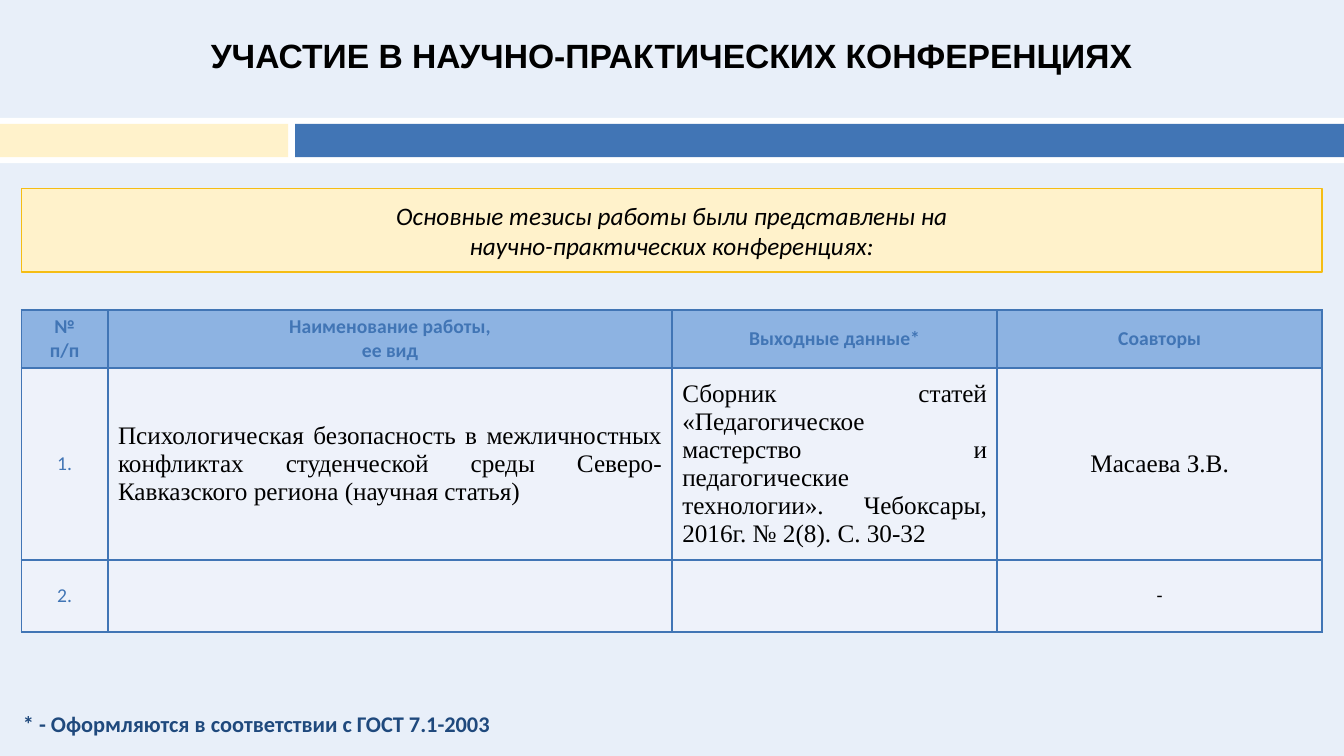
from dataclasses import dataclass

from lxml import etree
from pptx import Presentation
from pptx.dml.color import RGBColor
from pptx.enum.shapes import MSO_SHAPE
from pptx.enum.text import MSO_ANCHOR, MSO_AUTO_SIZE, PP_ALIGN
from pptx.oxml.ns import qn
from pptx.util import Cm, Pt

RECT = MSO_SHAPE.RECTANGLE
MIDDLE = MSO_ANCHOR.MIDDLE
NO_FIT = MSO_AUTO_SIZE.NONE
LEFT, CENTER, JUSTIFY = PP_ALIGN.LEFT, PP_ALIGN.CENTER, PP_ALIGN.JUSTIFY


@dataclass(frozen=True)
class Theme:
    background: str = "E8EFF9"
    white: str = "FFFFFF"
    black: str = "000000"
    blue: str = "4175B5"
    navy: str = "1F497D"
    cream: str = "FFF2CB"
    gold: str = "F5BD14"
    header: str = "8DB3E2"
    cell: str = "EEF2FA"
    title_size: int = 24
    text_size: int = 18
    note_size: int = 16
    label_size: int = 14
    title_font: str = "Arial"
    main_font: str = "Calibri"
    entry_font: str = "Times New Roman"


T = Theme()


def write(tf, text, font, size, color, align=CENTER, bold=False, italic=False):
    for i, line in enumerate(text.split("\n")):
        p = tf.paragraphs[0] if i == 0 else tf.add_paragraph()
        p.text = line
        p.alignment = align
        p.font.name = font
        p.font.size = Pt(size)
        p.font.bold = bold
        p.font.italic = italic
        p.font.color.rgb = RGBColor.from_string(color)


def add_rect(s, left, top, width, height, fill, line=None):
    sp = s.shapes.add_shape(RECT, Cm(left), Cm(top), Cm(width), Cm(height))
    sp.shadow.inherit = False
    sp.fill.solid()
    sp.fill.fore_color.rgb = RGBColor.from_string(fill)
    if line:
        sp.line.color.rgb = RGBColor.from_string(line)
        sp.line.width = Pt(1)
    else:
        sp.line.fill.background()
    return sp


prs = Presentation()
prs.slide_width, prs.slide_height = Cm(33.87), Cm(19.05)
s = prs.slides.add_slide(prs.slide_layouts[5])
s.background.fill.solid()
s.background.fill.fore_color.rgb = RGBColor.from_string(T.background)

title = s.shapes.title
title.left, title.top, title.width, title.height = Cm(4.95), Cm(0.76), Cm(23.95), Cm(1.27)
tf = title.text_frame
tf.auto_size = NO_FIT
tf.word_wrap = False
tf.vertical_anchor = MIDDLE
write(tf, "УЧАСТИЕ В НАУЧНО-ПРАКТИЧЕСКИХ КОНФЕРЕНЦИЯХ", T.title_font, T.title_size, T.black, bold=True)

add_rect(s, 0, 2.97, 33.87, 1.14, T.white)
add_rect(s, 7.44, 3.12, 26.43, 0.84, T.blue)
add_rect(s, 0, 3.12, 7.26, 0.84, T.cream)

banner = add_rect(s, 0.54, 4.75, 32.78, 2.11, T.cream, T.gold)
tf = banner.text_frame
tf.word_wrap = True
tf.vertical_anchor = MIDDLE
write(tf, "Основные тезисы работы были представлены на\nнаучно-практических конференциях:",
      T.main_font, T.text_size, T.black, italic=True)

header = ["№\nп/п", "Наименование работы,\nее вид", "Выходные данные*", "Соавторы"]
works = [
    ["1.",
     "Психологическая безопасность в межличностных конфликтах студенческой среды "
     "Северо-Кавказского региона (научная статья)",
     "Сборник статей «Педагогическое мастерство и педагогические технологии». "
     "Чебоксары, 2016г. № 2(8). С. 30-32",
     "Масаева З.В."],
    ["2.", "", "", "-"],
]
label = (T.main_font, T.label_size, T.blue, CENTER)
entry = (T.entry_font, T.text_size, T.black)
styles = [
    [(*label, True)] * 4,
    [label, (*entry, JUSTIFY), (*entry, JUSTIFY), (*entry, CENTER)],
    [label, label, label, (T.main_font, T.label_size, T.black, CENTER)],
]
col_widths = [2.18, 14.22, 8.19, 8.19]
row_heights = [1.44, 4.84, 1.82]
table = s.shapes.add_table(3, 4, Cm(0.54), Cm(7.81), Cm(sum(col_widths)), Cm(sum(row_heights))).table
table.first_row = False
table.horz_banding = False
for col, width in zip(table.columns, col_widths):
    col.width = Cm(width)
for row, height in zip(table.rows, row_heights):
    row.height = Cm(height)

for r, texts in enumerate([header, *works]):
    for c, text in enumerate(texts):
        cell = table.cell(r, c)
        cell.vertical_anchor = MIDDLE
        if text:
            write(cell.text_frame, text, *styles[r][c])
        tcPr = cell._tc.get_or_add_tcPr()
        for side in ("lnL", "lnR", "lnT", "lnB"):
            ln = etree.SubElement(tcPr, qn(f"a:{side}"), w=str(Pt(1.5)))
            fill = etree.SubElement(ln, qn("a:solidFill"))
            etree.SubElement(fill, qn("a:srgbClr"), val=T.blue)
        cell.fill.solid()
        cell.fill.fore_color.rgb = RGBColor.from_string(T.cell if r else T.header)

note = s.shapes.add_textbox(Cm(0.33), Cm(17.78), Cm(12.57), Cm(0.94))
tf = note.text_frame
tf.word_wrap = False
write(tf, "* - Оформляются в соответствии с ГОСТ 7.1-2003", T.main_font, T.note_size, T.navy, LEFT, bold=True)

prs.save("out.pptx")
